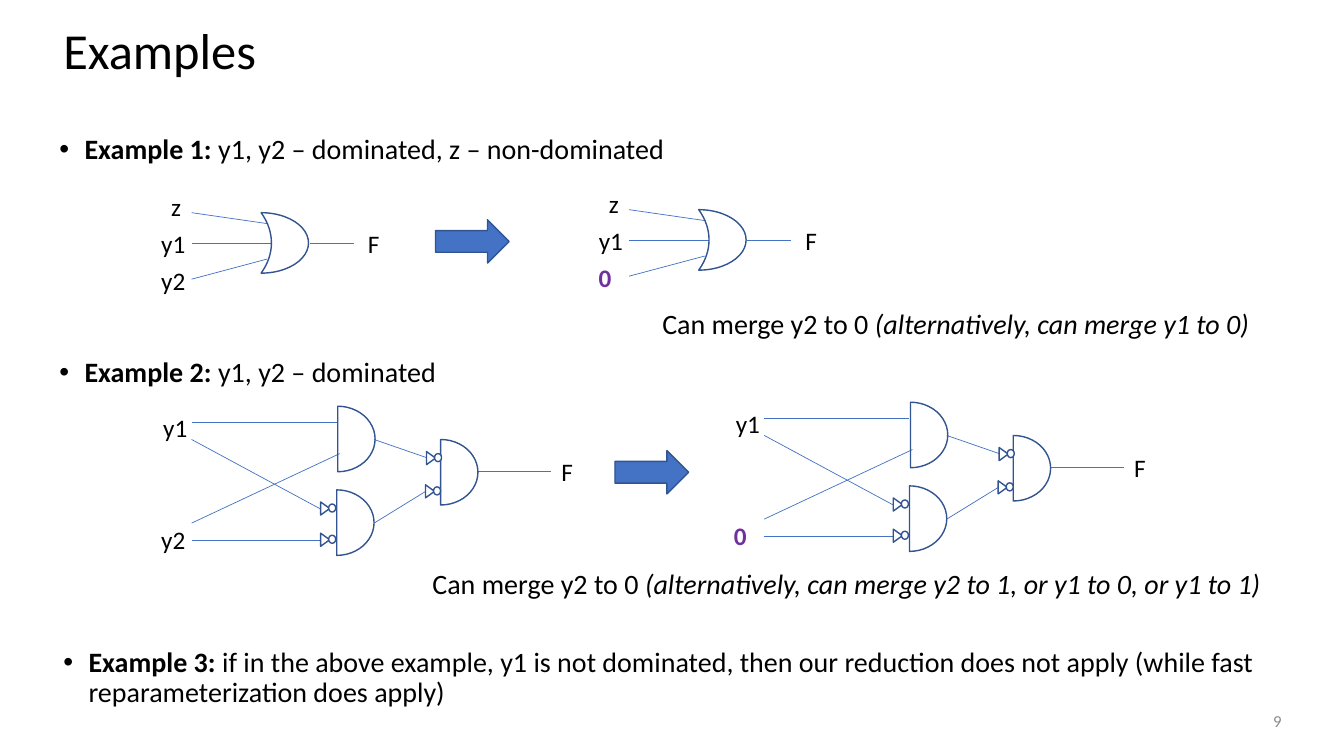
from lxml import etree
from pptx import Presentation
from pptx.dml.color import RGBColor
from pptx.enum.shapes import MSO_CONNECTOR, MSO_SHAPE
from pptx.enum.text import MSO_ANCHOR, MSO_AUTO_SIZE, PP_ALIGN
from pptx.oxml.ns import qn
from pptx.util import Inches, Pt

DOWN, MOON, PIE = MSO_SHAPE.DOWN_ARROW, MSO_SHAPE.MOON, MSO_SHAPE.PIE
TRI, OVAL = MSO_SHAPE.ISOSCELES_TRIANGLE, MSO_SHAPE.OVAL
STRAIGHT = MSO_CONNECTOR.STRAIGHT
MIDDLE, RIGHT, GROW = MSO_ANCHOR.MIDDLE, PP_ALIGN.RIGHT, MSO_AUTO_SIZE.SHAPE_TO_FIT_TEXT

CELL = Inches(0.01)
COLS, ROWS = 1333, 750
FONT, BLACK, PURPLE, GREY = "Calibri", "000000", "7030A0", "8C8C8C"
BLUE, EDGE, WHITE = "4472C4", "325491", "FFFFFF"


def color(code):
    return RGBColor.from_string(code)


def grid(*cells):
    return [int(n * CELL) for n in cells]


def apply(target, style):
    for name, value in style.items():
        setattr(target, name, value)


def text(slide, box, runs, size=20, tint=BLACK, frame=None, para=None):
    body = slide.shapes.add_textbox(*grid(*box)).text_frame
    apply(body, {"word_wrap": True, **(frame or {})})
    line = body.paragraphs[0]
    apply(line, para or {})
    for words, style in runs:
        run = line.add_run()
        run.text = words
        apply(run.font, {"name": FONT, "size": Pt(size), **style})
        run.font.color.rgb = color(tint)
    return line


def label(slide, box, words):
    zero = words == "0"
    text(slide, box, [(words, {"bold": zero})], 18, PURPLE if zero else BLACK,
         {"word_wrap": False, "auto_size": GROW})


def shape(slide, kind, box, turn=0, fill=None, adjust=()):
    item = slide.shapes.add_shape(kind, *grid(*box))
    item.rotation = turn
    item.shadow.inherit = False
    for i, value in enumerate(adjust):
        item.adjustments[i] = value
    if fill:
        item.fill.solid()
        item.fill.fore_color.rgb = color(fill)
    else:
        item.fill.background()
    item.line.color.rgb = color(EDGE)
    item.line.width = Pt(1)


def wire(slide, x, y, ends):
    x1, y1, x2, y2 = ends
    link = slide.shapes.add_connector(STRAIGHT, *grid(x + x1, y + y1, x + x2, y + y2))
    link.line.color.rgb = color(BLUE)
    link.line.width = Pt(0.5)
    etree.SubElement(link._element.spPr, qn("a:effectLst"))


def arrow(slide, x, y):
    shape(slide, DOWN, (x, y, 43, 73), 270, BLUE)


def bullet(slide, box, head, rest):
    line = text(slide, box, [(head, {"bold": True}), (rest, {})],
                para={"line_spacing": 0.9, "space_before": Pt(10)})
    props = line._p.get_or_add_pPr()
    props.set("marL", str(Inches(0.25)))
    props.set("indent", str(-Inches(0.25)))
    etree.SubElement(props, qn("a:buFont")).set("typeface", "Arial")
    etree.SubElement(props, qn("a:buChar")).set("char", "•")


def remark(slide, box, rest):
    text(slide, box, [("Can merge y2 to 0", {}), (rest, {"italic": True})],
         para={"line_spacing": 0.9, "space_before": Pt(10)})


def or_net(slide, x, y, last):
    for ends in ((40, 26, 116, 37), (40, 56, 119, 56), (40, 92, 115, 72), (157, 56, 201, 56)):
        wire(slide, x, y, ends)
    shape(slide, MOON, (x + 109, y + 26, 47, 60), 180, adjust=(0.782,))
    label(slide, (x + 10, y, 27, 36), "z")
    label(slide, (x, y + 37, 45, 43), "y1")
    label(slide, (x, y + 73, 33 if last == "0" else 45, 43), last)
    label(slide, (x + 205, y + 37, 29, 36), "F")


def and_net(slide, x, y, last):
    for ends in ((40, 16, 184, 16), (40, 33, 168, 102), (40, 116, 187, 47), (40, 133, 168, 133),
                 (221, 33, 273, 51), (221, 116, 273, 84), (324, 65, 397, 65)):
        wire(slide, x, y, ends)
    for dx, dy in ((148, 0), (147, 83), (250, 33)):
        shape(slide, PIE, (x + dx, y + dy, 74, 65), 180, adjust=(54, 162))
    for dx, dy in ((271, 47), (270, 80), (166, 97), (166, 128)):
        shape(slide, TRI, (x + dx, y + dy, 13, 9), 90, WHITE)
        shape(slide, OVAL, (x + dx + 10, y + dy, 7, 8), 0, WHITE)
    label(slide, (x + 2, y + 1, 44, 40), "y1")
    label(slide, (x, y + 112, 33 if last == "0" else 44, 40), last)
    label(slide, (x + 397, y + 45, 32, 40), "F")


def first(slide, x, y):
    bullet(slide, (x, y, 1228, 41), "Example 1:", " y1, y2 – dominated, z – non-dominated")
    or_net(slide, x + 101, y + 56, "y2")
    arrow(slide, x + 398, y + 74)
    or_net(slide, x + 535, y + 53, "0")
    remark(slide, (x + 598, y + 174, 622, 45), " (alternatively, can merge y1 to 0)")


def second(slide, x, y):
    bullet(slide, (x, y, 1280, 48), "Example 2:", " y1, y2 – dominated")
    and_net(slide, x + 101, y + 52, "y2")
    arrow(slide, x + 576, y + 81)
    and_net(slide, x + 669, y + 48, "0")
    remark(slide, (x + 370, y + 210, 850, 36),
           " (alternatively, can merge y2 to 1, or y1 to 0, or y1 to 1)")


def third(slide, x, y):
    bullet(slide, (x, y, 1269, 73), "Example 3:",
           " if in the above example, y1 is not dominated, then our reduction does not apply "
           "(while fast reparameterization does apply)")


def main():
    deck = Presentation()
    apply(deck, {"slide_width": COLS * CELL, "slide_height": ROWS * CELL})
    slide = deck.slides.add_slide(deck.slide_layouts[6])
    mid = {"vertical_anchor": MIDDLE}
    text(slide, (53, 6, 1260, 93), [("Examples", {})], 36, frame=mid, para={"line_spacing": 0.9})
    first(slide, 49, 129)
    second(slide, 49, 351)
    third(slide, 53, 638)
    text(slide, (981, 695, 300, 40), [("9", {})], 12, GREY, mid, {"alignment": RIGHT})
    deck.save("out.pptx")


if __name__ == "__main__":
    main()
